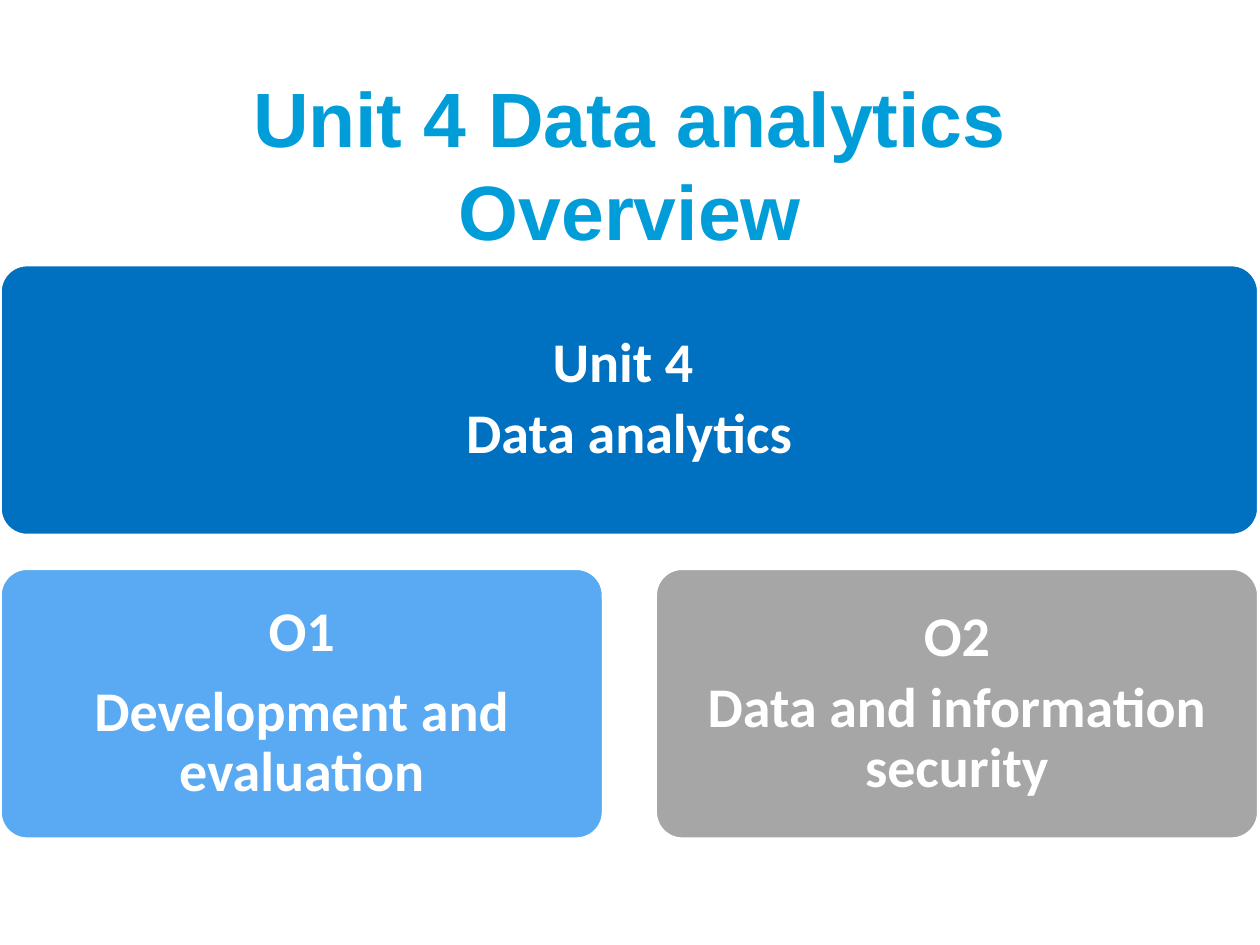
from pptx import Presentation
from pptx.dml.color import RGBColor
from pptx.enum.shapes import MSO_SHAPE
from pptx.enum.text import MSO_ANCHOR, PP_ALIGN
from pptx.util import Inches, Pt

THEME = {
    "title": {"name": "Arial", "size": Pt(44), "bold": True, "color": "009DD9"},
    "card": {"name": "Calibri", "size": Pt(32), "bold": True, "color": "FFFFFF"},
    "unit": "0070C0",
    "development": "59AAF2",
    "security": "A6A6A6",
    "outline": "FFFFFF",
}

deck = Presentation()
deck.slide_width, deck.slide_height = Inches(10), Inches(7.5)
slide = deck.slides.add_slide(deck.slide_layouts[6])

grid_width, grid_top = 9.99, 2.1
column_gap, row_gap = 0.41, 0.26
card_height = 2.15
half_width = (grid_width - column_gap) / 2
column_step = half_width + column_gap
row_step = card_height + row_gap


def write_paragraph(paragraph, text, style, **spacing):
    paragraph.text = text
    for key, value in {"alignment": PP_ALIGN.CENTER, **spacing}.items():
        setattr(paragraph, key, value)
    for run in paragraph.runs:
        for key in ("name", "size", "bold"):
            setattr(run.font, key, style[key])
        run.font.color.rgb = RGBColor.from_string(style["color"])


heading = slide.shapes.add_textbox(Inches(0.75), Inches(0.67), Inches(8.5), Inches(1.25))
heading.text_frame.word_wrap = True
heading.text_frame.vertical_anchor = MSO_ANCHOR.MIDDLE
write_paragraph(heading.text_frame.paragraphs[0], "Unit 4 Data analytics\nOverview", THEME["title"])

cards = [
    (0, 0, grid_width, "unit", 6, ["Unit 4 ", "Data analytics"]),
    (0, 1, half_width, "development", 11, ["O1", "Development and evaluation"]),
    (1, 1, half_width, "security", 6, ["O2", "Data and information security"]),
]
card_format = {
    "word_wrap": True,
    "vertical_anchor": MSO_ANCHOR.MIDDLE,
    "margin_left": Inches(0.19),
    "margin_right": Inches(0.19),
    "margin_top": Inches(0.19),
    "margin_bottom": Inches(0.19),
}

for column, row, width, topic, space_after, lines in cards:
    card = slide.shapes.add_shape(
        MSO_SHAPE.ROUNDED_RECTANGLE,
        Inches(column * column_step),
        Inches(grid_top + row * row_step),
        Inches(width),
        Inches(card_height),
    )
    card.adjustments[0] = 0.1
    card.shadow.inherit = False
    card.fill.solid()
    card.fill.fore_color.rgb = RGBColor.from_string(THEME[topic])
    card.line.color.rgb = RGBColor.from_string(THEME["outline"])
    card.line.width = Pt(2)
    label = card.text_frame
    for key, value in card_format.items():
        setattr(label, key, value)
    for index, line in enumerate(lines):
        paragraph = label.add_paragraph() if index else label.paragraphs[0]
        write_paragraph(
            paragraph, line, THEME["card"], line_spacing=0.9, space_after=Pt(space_after)
        )

deck.save("out.pptx")
